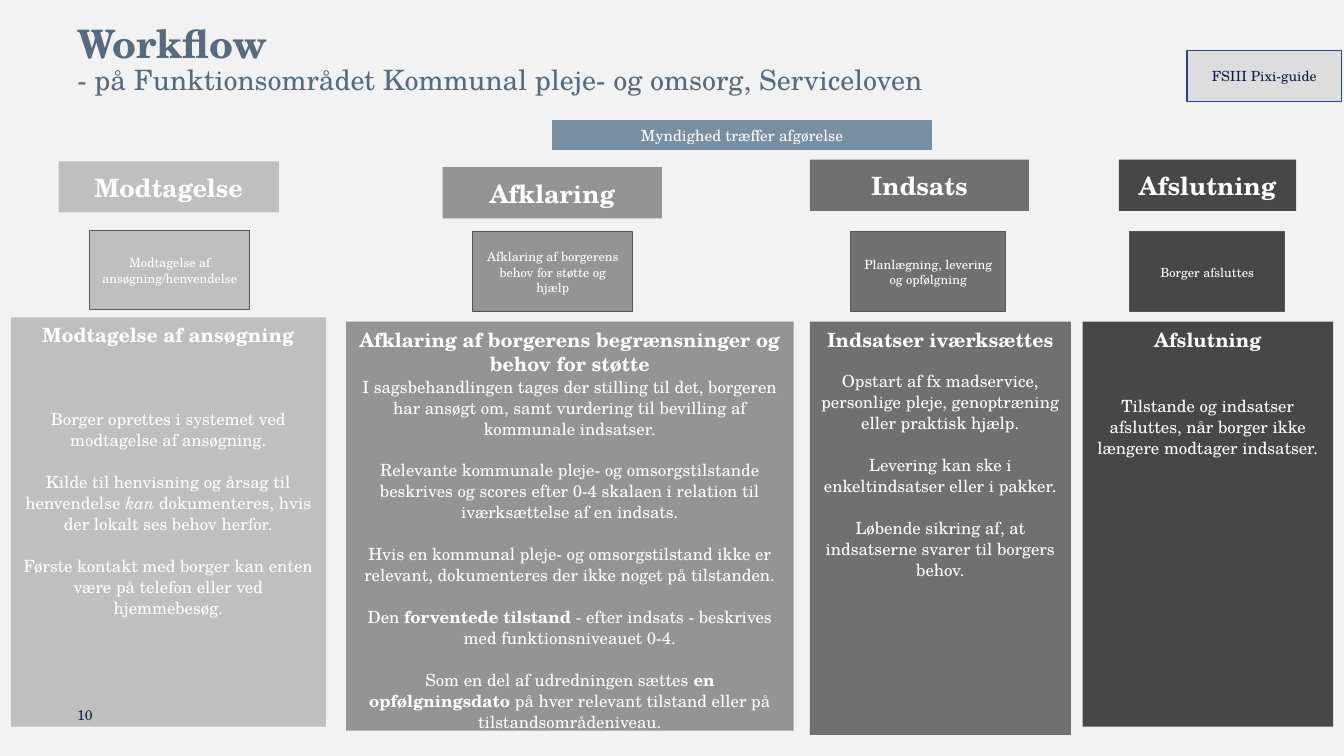
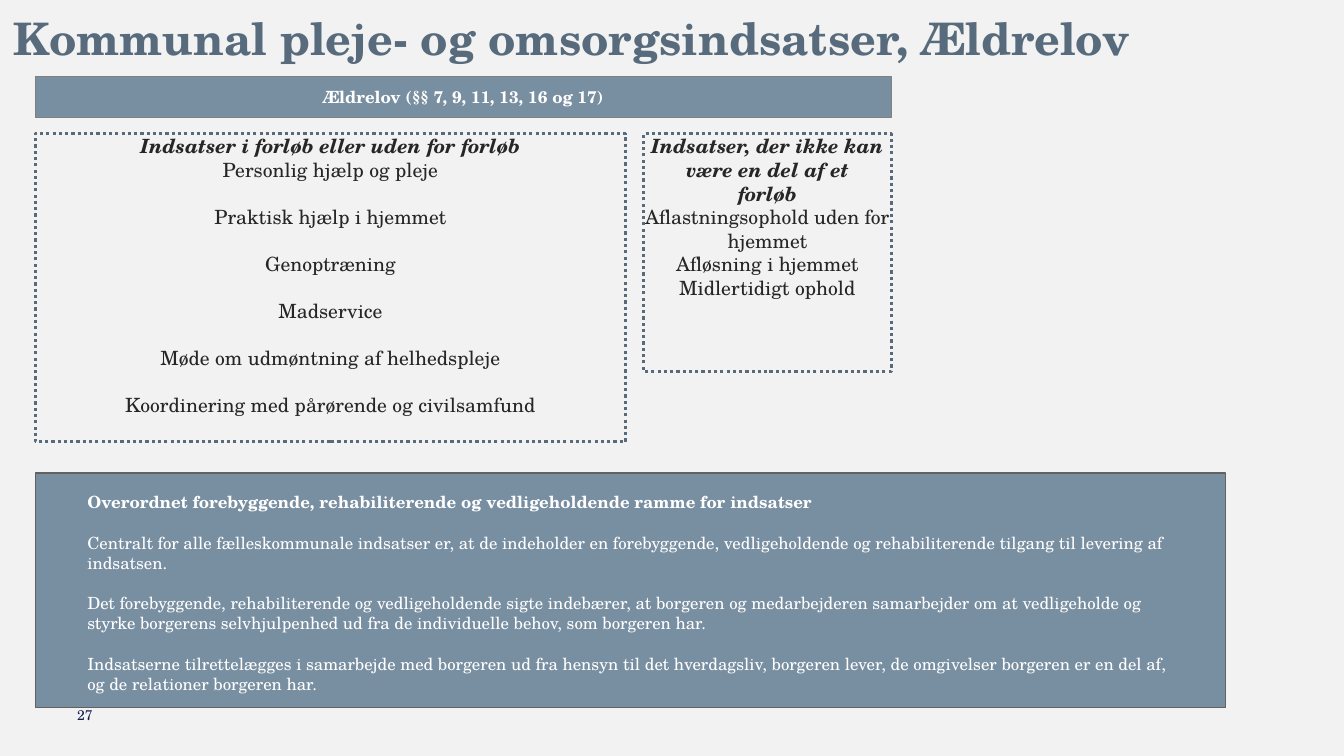
from dataclasses import dataclass

from pptx import Presentation
from pptx.dml.color import RGBColor
from pptx.enum.dml import MSO_LINE
from pptx.enum.shapes import MSO_SHAPE
from pptx.enum.text import MSO_ANCHOR as Anchor, MSO_AUTO_SIZE, PP_ALIGN as Align
from pptx.util import Inches, Pt

COLUMNS, ROWS = 160, 90
FONT = "TeX Gyre Schola"
BACKGROUND, TITLE, NAVY = "F2F2F2", "576B7C", "141E4D"
STEEL, WHITE, INK = "788EA1", "FFFFFF", "262626"
CARD_EDGE = "565656"
HEADER_HEIGHT, CARD_HEIGHT = 6.1, 9.5
INSETS = (1.2, 0.6)
TITLE_ONLY = 5


@dataclass
class Line:
    """One paragraph; text between bars gets the emphasis."""
    text: str
    size: float
    bold: bool = False
    italic: bool = False
    before: float = 0
    emphasis: str = "bold"


@dataclass
class Stage:
    """One column of the workflow."""
    name: str
    color: str
    header: tuple
    card: tuple
    panel: tuple
    summary: str
    lines: list


def color(value):
    """Turn a hex string into a colour."""
    return RGBColor.from_string(value)


class Deck:
    """Holds the shared style and the current slide."""

    def __init__(self):
        """Start a widescreen presentation on a pale background."""
        self.presentation = Presentation()
        self.presentation.slide_width = Inches(13.33)
        self.presentation.slide_height = Inches(7.5)
        fill = self.presentation.slide_master.background.fill
        fill.solid()
        fill.fore_color.rgb = color(BACKGROUND)

    def place(self, box):
        """Convert grid columns and rows to slide lengths."""
        width, height = self.presentation.slide_width, self.presentation.slide_height
        left, top, across, down = box
        return (int(width * left / COLUMNS), int(height * top / ROWS),
                int(width * across / COLUMNS), int(height * down / ROWS))

    def fill_text(self, shape, lines, ink, align=Align.LEFT, anchor=Anchor.TOP,
                  spacing=1.0, insets=INSETS):
        """Fill a shape with formatted paragraphs."""
        frame = shape.text_frame
        frame.word_wrap = True
        frame.auto_size = MSO_AUTO_SIZE.NONE
        frame.vertical_anchor = anchor
        side, edge = self.place((*insets, 0, 0))[:2]
        frame.margin_left = frame.margin_right = side
        frame.margin_top = frame.margin_bottom = edge
        for index, line in enumerate(lines):
            paragraph = frame.add_paragraph() if index else frame.paragraphs[0]
            paragraph.alignment = align
            paragraph.line_spacing = spacing
            paragraph.space_before = Pt(line.before)
            font = paragraph.font
            font.name, font.size = FONT, Pt(line.size)
            font.bold, font.italic = line.bold, line.italic
            font.color.rgb = color(ink)
            for position, piece in enumerate(line.text.split("|")):
                run = paragraph.add_run()
                run.text = piece
                if position % 2:
                    run.font.bold = line.emphasis == "bold"
                    run.font.italic = line.emphasis == "italic"

    def start(self, number, box, lines):
        """Add a slide with its title and page number."""
        layout = self.presentation.slide_layouts[TITLE_ONLY]
        self.slide = self.presentation.slides.add_slide(layout)
        title = self.slide.shapes.title
        title.left, title.top, title.width, title.height = self.place(box)
        self.fill_text(title, lines, TITLE, anchor=Anchor.MIDDLE, spacing=0.9,
                       insets=(0, 0))
        self.number = number

    def finish(self):
        """Put the page number in front of the slide."""
        self.text((9.2, 82.7, 36, 4.8), [Line(self.number, 10)], NAVY,
                  anchor=Anchor.MIDDLE, insets=(0, 0))

    def text(self, box, lines, ink, **style):
        """Add a text box."""
        shape = self.slide.shapes.add_textbox(*self.place(box))
        self.fill_text(shape, lines, ink, **style)

    def block(self, box, lines=(), fill=None, edge=None, weight=1, dash=None,
              ink=WHITE, anchor=Anchor.MIDDLE, **style):
        """Add a rectangle with centred text."""
        shape = self.slide.shapes.add_shape(MSO_SHAPE.RECTANGLE, *self.place(box))
        shape.shadow.inherit = False
        if fill:
            shape.fill.solid()
            shape.fill.fore_color.rgb = color(fill)
        else:
            shape.fill.background()
        if edge:
            shape.line.color.rgb = color(edge)
            shape.line.width = Pt(weight)
            if dash:
                shape.line.dash_style = dash
        else:
            shape.line.fill.background()
        self.fill_text(shape, lines, ink, align=Align.CENTER, anchor=anchor, **style)

    def stage(self, stage):
        """Add the header, card and panel of one workflow stage."""
        left, top, width = stage.header
        self.block((left, top, width, HEADER_HEIGHT), [Line(stage.name, 18, bold=True)],
                   stage.color, spacing=1.04)
        left, top, width = stage.card
        self.block((left, top, width, CARD_HEIGHT), [Line(stage.summary, 9)],
                   stage.color, CARD_EDGE, 0.75, spacing=1.04)
        self.block(stage.panel, stage.lines, stage.color, anchor=Anchor.TOP, spacing=1.04)

    def dotted(self, box, lines):
        """Add a dotted frame with text from its top edge."""
        self.block(box, lines, edge=TITLE, weight=2.25, dash=MSO_LINE.ROUND_DOT,
                   ink=INK, anchor=Anchor.TOP, insets=(0, 0.1))


STAGES = [
    Stage("Modtagelse", "BFBFBF", (7, 19.2, 26.2), (10.7, 27.4, 19),
          (1.3, 37.8, 37.5, 48.7), "Modtagelse af ansøgning/henvendelse", [
              Line("Modtagelse af ansøgning", 14, bold=True),
              Line("Borger oprettes i systemet ved modtagelse af ansøgning.", 12, before=43.7),
              Line("Kilde til henvisning og årsag til henvendelse |kan| dokumenteres, "
                   "hvis der lokalt ses behov herfor.", 12, before=15, emphasis="italic"),
              Line("Første kontakt med borger kan enten være på telefon eller ved "
                   "hjemmebesøg.", 12, before=15)]),
    Stage("Afklaring", "949494", (52.7, 19.9, 26.1), (56.3, 27.6, 19),
          (41.2, 38.3, 53.3, 48.7), "Afklaring af borgerens behov for støtte og hjælp", [
              Line("Afklaring af borgerens begrænsninger og behov for støtte", 14, bold=True),
              Line("I sagsbehandlingen tages der stilling til det, borgeren har ansøgt om, "
                   "samt vurdering til bevilling af kommunale indsatser.", 12),
              Line("Relevante kommunale pleje- og omsorgstilstande beskrives og scores efter "
                   "0-4 skalaen i relation til iværksættelse af en indsats.", 12, before=15),
              Line("Hvis en kommunal pleje- og omsorgstilstand ikke er relevant, "
                   "dokumenteres der ikke noget på tilstanden.", 12, before=15),
              Line("Den |forventede tilstand| - efter indsats - beskrives med "
                   "funktionsniveauet 0-4.", 12, before=15),
              Line("Som en del af udredningen sættes |en opfølgningsdato| på hver relevant "
                   "tilstand eller på tilstandsområdeniveau.", 12, before=15)]),
    Stage("Indsats", "707070", (96.4, 19, 26.1), (101.3, 27.6, 18.4),
          (96.4, 38.3, 31.1, 49.2), "Planlægning, levering og opfølgning", [
              Line("Indsatser iværksættes", 14, bold=True),
              Line("Opstart af fx madservice, personlige pleje, genoptræning eller "
                   "praktisk hjælp.", 12, before=13.7),
              Line("Levering kan ske i enkeltindsatser eller i pakker.", 12, before=15),
              Line("Løbende sikring af, at indsatserne svarer til borgers behov.", 12,
                   before=15)]),
    Stage("Afslutning", "474747", (133.2, 19, 21.1), (134.5, 27.6, 18.4),
          (128.9, 38.3, 29.8, 48.2), "Borger afsluttes", [
              Line("Afslutning", 14, bold=True),
              Line("Tilstande og indsatser afsluttes, når borger ikke længere modtager "
                   "indsatser.", 12, before=31.2)]),
]

CARE_SERVICES = ["Praktisk hjælp i hjemmet", "Genoptræning", "Madservice",
                 "Møde om udmøntning af helhedspleje",
                 "Koordinering med pårørende og civilsamfund"]
RELIEF_SERVICES = ["Aflastningsophold uden for hjemmet", "Afløsning i hjemmet",
                   "Midlertidigt ophold"]
FRAMEWORK = [
    "Centralt for alle fælleskommunale indsatser er, at de indeholder en forebyggende, "
    "vedligeholdende og rehabiliterende tilgang til levering af indsatsen.",
    "Det forebyggende, rehabiliterende og vedligeholdende sigte indebærer, at borgeren og "
    "medarbejderen samarbejder om at vedligeholde og styrke borgerens selvhjulpenhed ud fra "
    "de individuelle behov, som borgeren har.",
    "Indsatserne tilrettelægges i samarbejde med borgeren ud fra hensyn til det hverdagsliv, "
    "borgeren lever, de omgivelser borgeren er en del af, og de relationer borgeren har.",
]


def build_workflow(deck):
    """Build the slide with the four workflow stages."""
    deck.start("10", (9.2, 0.6, 131.2, 13.2), [
        Line("Workflow", 28, bold=True),
        Line("- på Funktionsområdet Kommunal pleje- og omsorg, Serviceloven", 20)])
    for stage in STAGES:
        deck.stage(stage)
    deck.block((65.8, 14.3, 45.1, 3.5), [Line("Myndighed træffer afgørelse", 11)],
               STEEL, STEEL, 0.75, spacing=1.04)
    deck.block((141.3, 6, 18.4, 6.1), [Line("FSIII Pixi-guide", 10)],
               "DDDDDD", "2A438F", ink=NAVY)
    deck.finish()


def build_services(deck):
    """Build the slide with the services of the care act."""
    deck.start("27", (1.6, -1.7, 142.4, 13.2), [
        Line("Kommunal pleje- og omsorgsindsatser, Ældrelov", 32, bold=True)])
    deck.block((4.2, 9.1, 101.9, 4.9),
               [Line("Ældrelov (§§ 7, 9, 11, 13, 16 og 17)", 12, bold=True)],
               STEEL, "808080")
    deck.dotted((4.2, 15.9, 70.3, 36.7), [
        Line("Indsatser i forløb eller uden for forløb", 14, bold=True, italic=True),
        Line("Personlig hjælp og pleje", 14),
        *(Line(service, 14, before=16.8) for service in CARE_SERVICES)])
    deck.dotted((76.6, 15.9, 29.5, 28.3), [
        Line("Indsatser, der ikke kan være en del af et", 14, bold=True, italic=True),
        Line("forløb", 14, bold=True, italic=True),
        *(Line(service, 14) for service in RELIEF_SERVICES)])
    deck.block((4.2, 56.3, 141.7, 27.9), fill=STEEL, edge="616161")
    deck.text((9.2, 58, 133.3, 26.2), [
        Line("Overordnet forebyggende, rehabiliterende og vedligeholdende ramme for "
             "indsatser", 12, bold=True),
        *(Line(text, 12, before=14.4) for text in FRAMEWORK)], WHITE)
    deck.finish()


def main():
    """Build and save both slides."""
    deck = Deck()
    build_workflow(deck)
    build_services(deck)
    deck.presentation.save("out.pptx")


if __name__ == "__main__":
    main()
